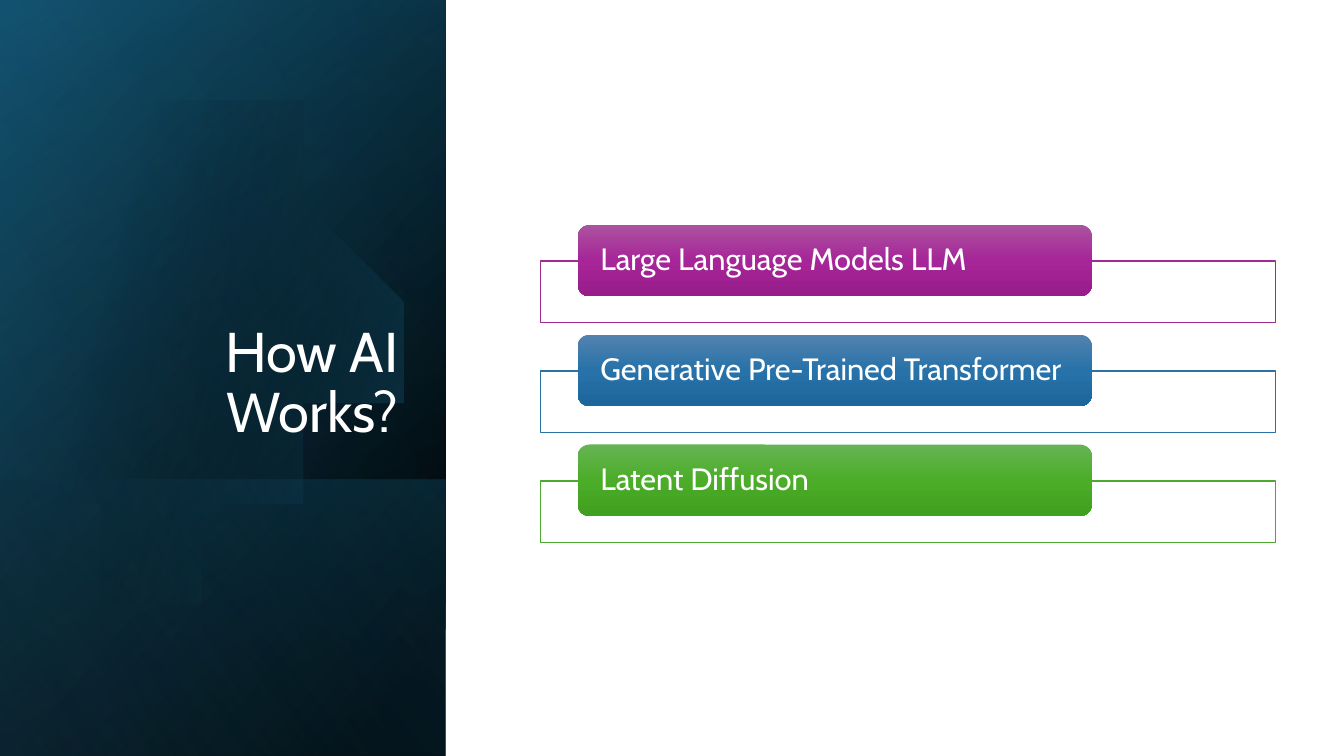
from lxml.etree import SubElement
from pptx import Presentation
from pptx.dml.color import RGBColor
from pptx.enum.shapes import MSO_SHAPE as Shape
from pptx.enum.text import MSO_ANCHOR as Anchor, PP_ALIGN as Align
from pptx.oxml.ns import qn
from pptx.util import Inches, Pt

TITLE = "How AI Works?"

# Gradient stops are (position %, colour, opacity %).
TOPICS = [
    {"label": "Large Language Models LLM", "outline": "A02B93",
     "stops": [(0, "AC53A0", 100), (50, "A62598", 100), (100, "991C8B", 100)]},
    {"label": "Generative Pre-Trained Transformer", "outline": "2C71A4",
     "stops": [(0, "5382AF", 100), (50, "2772A9", 100), (100, "1D669C", 100)]},
    {"label": "Latent Diffusion", "outline": "4EA72E",
     "stops": [(0, "66B354", 100), (50, "4BAD28", 100), (100, "409F1E", 100)]},
]

THEME = {"font": "Cabin", "text": "FFFFFF", "paper": "FFFFFF",
         "title_size": 40, "topic_size": 22}

# Side panel layers: (top, height, gradient angle, stops)
PANEL_WIDTH = 4.42
PANEL_BASE = [
    (0, 7.5, 50, [(8, "000000", 100), (100, "104862", 100)]),
    (0, 7.5, 30, [(0, "000000", 0), (99, "156082", 46)]),
    (4.76, 2.74, 130, [(2, "156082", 29), (100, "000000", 30)]),
]
PANEL_GLAZE = (0, 7.5, 120, [(0, "000000", 0), (99, "46B1E1", 11)])

DISC_START = (1.49, 1.1)
DISC_CURVES = [  # a single point is a straight edge, three are a Bezier curve
    [(2.46, 1.12), (3.35, 1.77), (3.63, 2.75)],
    [(3.98, 3.97), (3.28, 5.23), (2.07, 5.58)],
    [(1.31, 5.8), (0.53, 5.61), (-0.03, 5.14)],
    [(-0.15, 5.03)],
    [(-0.15, 1.75)],
    [(0, 1.61)],
    [(0.23, 1.42), (0.5, 1.28), (0.8, 1.19)],
    [(1.03, 1.13), (1.26, 1.1), (1.49, 1.1)],
]
DISC_ANGLE = 14
DISC_STOPS = [(29, "000000", 0), (100, "156082", 43)]

TITLE_BOX = (0.64, 1.84, 3.41, 2.62)
FRAME_LEFT, FRAME_TOP, FRAME_WIDTH, FRAME_HEIGHT = 5.36, 2.59, 7.29, 0.61
BAR_LEFT, BAR_TOP, BAR_WIDTH, BAR_HEIGHT = 5.73, 2.23, 5.1, 0.71
TOPIC_STEP = 1.09
CURVE_STEPS = 24


def set_opacity(color, percent):
    if percent < 100:
        SubElement(color, qn("a:alpha"), val=str(percent * 1000))


def fill_gradient(shape, stops, angle):
    shape.fill.solid()
    solid = shape._element.spPr.find(qn("a:solidFill"))
    gradient = solid.makeelement(qn("a:gradFill"), {"rotWithShape": "1"})
    solid.getparent().replace(solid, gradient)
    stop_list = SubElement(gradient, qn("a:gsLst"))
    for position, color, opacity in stops:
        stop = SubElement(stop_list, qn("a:gs"), pos=str(position * 1000))
        set_opacity(SubElement(stop, qn("a:srgbClr"), val=color), opacity)
    SubElement(gradient, qn("a:lin"), ang=str(angle * 60000), scaled="0")


def add_plain_shape(slide, kind, left, top, width, height):
    shape = slide.shapes.add_shape(kind, *map(Inches, (left, top, width, height)))
    shape.shadow.inherit = False
    shape.line.fill.background()
    return shape


def add_panel_layer(slide, top, height, angle, stops):
    """Add a mirrored rectangle turned by 90 degrees that spans the side panel."""
    center_x, center_y = PANEL_WIDTH / 2, top + height / 2
    layer = add_plain_shape(slide, Shape.RECTANGLE, center_x - height / 2,
                            center_y - PANEL_WIDTH / 2, height, PANEL_WIDTH)
    layer.rotation = 90
    layer._element.spPr.find(qn("a:xfrm")).set("flipH", "1")
    fill_gradient(layer, stops, angle)


def bezier_points(p0, p1, p2, p3):
    for step in range(1, CURVE_STEPS + 1):
        t = step / CURVE_STEPS
        u = 1 - t
        yield tuple(u**3 * a + 3 * u * u * t * b + 3 * u * t * t * c + t**3 * d
                    for a, b, c, d in zip(p0, p1, p2, p3))


def add_disc(slide):
    points = [DISC_START]
    for curve in DISC_CURVES:
        points += curve if len(curve) == 1 else list(bezier_points(points[-1], *curve))
    builder = slide.shapes.build_freeform(*DISC_START, scale=Inches(1))
    builder.add_line_segments(points[1:], close=True)
    disc = builder.convert_to_shape()
    disc.shadow.inherit = False
    disc.line.fill.background()
    fill_gradient(disc, DISC_STOPS, DISC_ANGLE)


def write_text(shape, text, *, size, align=Align.LEFT, anchor=Anchor.MIDDLE,
               margin_x=0.1, margin_y=0.05):
    frame = shape.text_frame
    frame.word_wrap = True
    frame.vertical_anchor = anchor
    frame.margin_left = frame.margin_right = Inches(margin_x)
    frame.margin_top = frame.margin_bottom = Inches(margin_y)
    paragraph = frame.paragraphs[0]
    paragraph.alignment = align
    paragraph.line_spacing = 0.9
    run = paragraph.add_run()
    run.text = text
    run.font.name = THEME["font"]
    run.font.size = Pt(size)
    run.font.color.rgb = RGBColor.from_string(THEME["text"])


def add_topic(slide, index, topic):
    offset = index * TOPIC_STEP
    frame = add_plain_shape(slide, Shape.RECTANGLE, FRAME_LEFT, FRAME_TOP + offset,
                            FRAME_WIDTH, FRAME_HEIGHT)
    frame.fill.solid()
    frame.fill.fore_color.rgb = RGBColor.from_string(THEME["paper"])
    set_opacity(frame._element.spPr.find(qn("a:solidFill"))[0], 90)
    frame.line.color.rgb = RGBColor.from_string(topic["outline"])
    frame.line.width = Pt(1)

    bar = add_plain_shape(slide, Shape.ROUNDED_RECTANGLE, BAR_LEFT, BAR_TOP + offset,
                          BAR_WIDTH, BAR_HEIGHT)
    fill_gradient(bar, topic["stops"], 90)
    write_text(bar, topic["label"], size=THEME["topic_size"], margin_x=0.19, margin_y=0)


def main():
    deck = Presentation()
    deck.slide_width, deck.slide_height = Inches(13.33), Inches(7.5)
    slide = deck.slides.add_slide(deck.slide_layouts[6])

    for layer in PANEL_BASE:
        add_panel_layer(slide, *layer)
    add_disc(slide)
    add_panel_layer(slide, *PANEL_GLAZE)

    title = slide.shapes.add_textbox(*map(Inches, TITLE_BOX))
    write_text(title, TITLE, size=THEME["title_size"], align=Align.RIGHT,
               anchor=Anchor.BOTTOM)
    for index, topic in enumerate(TOPICS):
        add_topic(slide, index, topic)
    deck.save("out.pptx")


if __name__ == "__main__":
    main()
